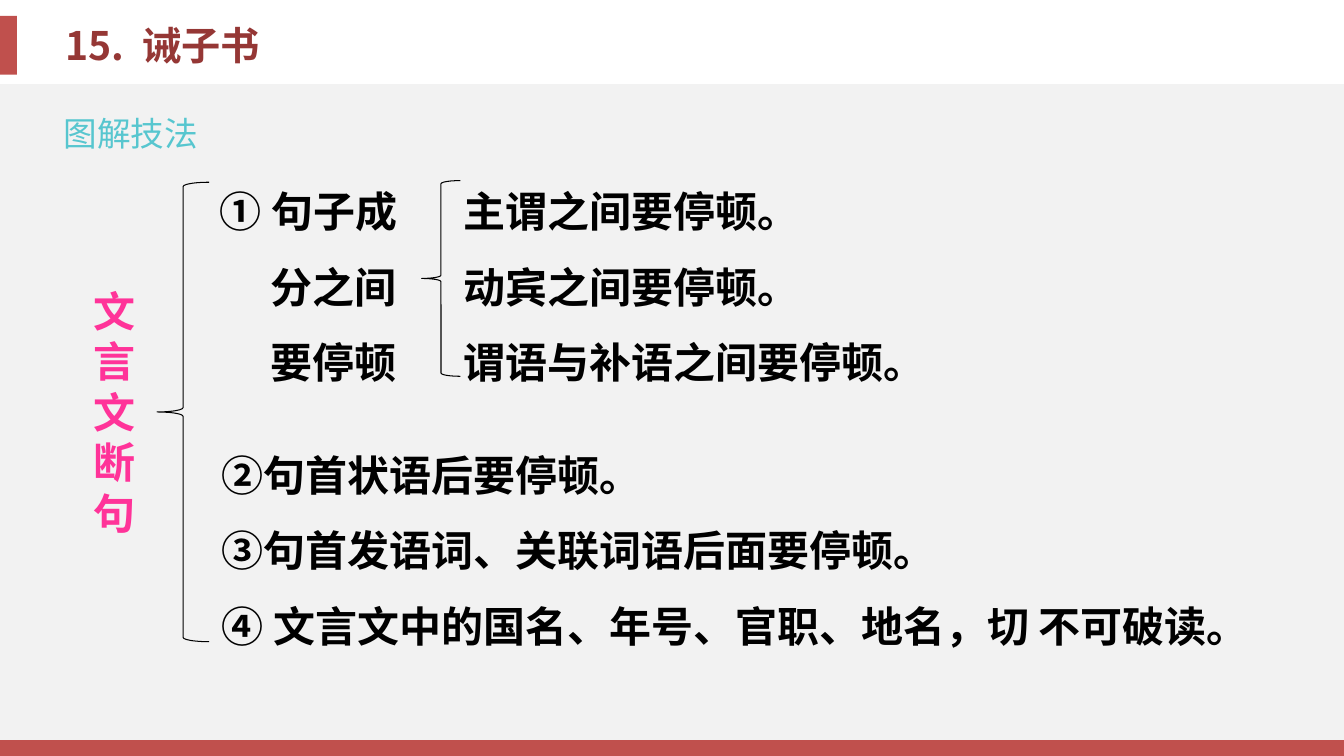
from lxml.etree import SubElement
from pptx import Presentation
from pptx.dml.color import RGBColor
from pptx.enum.shapes import MSO_SHAPE
from pptx.enum.text import MSO_ANCHOR, MSO_AUTO_SIZE
from pptx.oxml.ns import qn
from pptx.util import Inches, Pt

COLUMNS, ROWS = 160, 90
HAN_FONT = "Noto Sans CJK SC"


def color(hex_code):
    return RGBColor.from_string(hex_code)


def write(paragraph, text, size=30, font="Calibri", tint="000000", bold=True,
          spacing=None, hanging=0):
    run = paragraph.add_run()
    run.text = text
    run.font.size = Pt(size)
    run.font.name = font
    run.font.bold = bold
    run.font.color.rgb = color(tint)
    if font == HAN_FONT:
        SubElement(run.font._element, qn("a:ea"), typeface=font)
    if spacing:
        paragraph.line_spacing = spacing
    if hanging:
        properties = paragraph._p.get_or_add_pPr()
        properties.set("marL", str(Inches(hanging)))
        properties.set("indent", str(-Inches(hanging)))


class LessonSlide:
    red = "C0504D"
    gray = "F2F2F2"
    ink = "000000"

    def __init__(self, deck):
        self.column = deck.slide_width / COLUMNS
        self.row = deck.slide_height / ROWS
        self.shapes = deck.slides.add_slide(deck.slide_layouts[6]).shapes

    def place(self, left, top, width, height):
        return (round(left * self.column), round(top * self.row),
                round(width * self.column), round(height * self.row))

    def block(self, *cells, fill):
        block = self.shapes.add_shape(MSO_SHAPE.RECTANGLE, *self.place(*cells))
        block.shadow.inherit = False
        block.fill.solid()
        block.fill.fore_color.rgb = color(fill)
        block.line.fill.background()

    def brace(self, *cells):
        brace = self.shapes.add_shape(MSO_SHAPE.LEFT_BRACE, *self.place(*cells))
        brace.shadow.inherit = False
        brace.fill.background()
        brace.line.color.rgb = color(self.ink)
        brace.line.width = Pt(0.75)

    def text(self, *cells, lines, wrap=True, anchor=MSO_ANCHOR.TOP, **style):
        frame = self.shapes.add_textbox(*self.place(*cells)).text_frame
        frame.word_wrap = wrap
        frame.auto_size = MSO_AUTO_SIZE.SHAPE_TO_FIT_TEXT
        frame.vertical_anchor = anchor
        for number, line in enumerate(lines):
            paragraph = frame.add_paragraph() if number else frame.paragraphs[0]
            write(paragraph, line, **style)

    def rules(self, *cells, lines):
        self.text(*cells, lines=lines, spacing=1.5, hanging=0.5)


def main():
    deck = Presentation()
    deck.slide_width, deck.slide_height = Inches(13.33), Inches(7.5)
    lesson = LessonSlide(deck)

    lesson.block(0, 1.9, 2, 7, fill=lesson.red)
    lesson.block(0, 10, COLUMNS, 79.6, fill=lesson.gray)
    lesson.text(6.6, 1.9, 31.3, 6.8, lines=["15.  诫子书"], wrap=False,
                anchor=MSO_ANCHOR.MIDDLE, size=28, font=HAN_FONT, tint="953735")
    lesson.block(0, 88.1, COLUMNS, 1.9, fill=lesson.red)
    lesson.text(6.4, 12.8, 24.2, 6, lines=["图解技法"],
                size=24, font=HAN_FONT, tint="57C6CF", bold=False)

    lesson.text(10, 33.4, 7.9, 31.6, lines=["文言文断句"], tint="FF3399")
    lesson.brace(18.7, 21.7, 6.2, 54.7)
    lesson.rules(25, 18.5, 26, 28.4, lines=["① 句子成 分之间 要停顿"])
    lesson.brace(50.2, 21.5, 4.6, 23.3)
    lesson.rules(54, 18.5, 106, 27.4, lines=[
        "主谓之间要停顿。",
        "动宾之间要停顿。",
        "谓语与补语之间要停顿。",
    ])
    lesson.rules(25.2, 49.9, 125.5, 28.4, lines=[
        "②句首状语后要停顿。",
        "③句首发语词、关联词语后面要停顿。",
        "④ 文言文中的国名、年号、官职、地名，切 不可破读。",
    ])
    deck.save("out.pptx")


if __name__ == "__main__":
    main()
